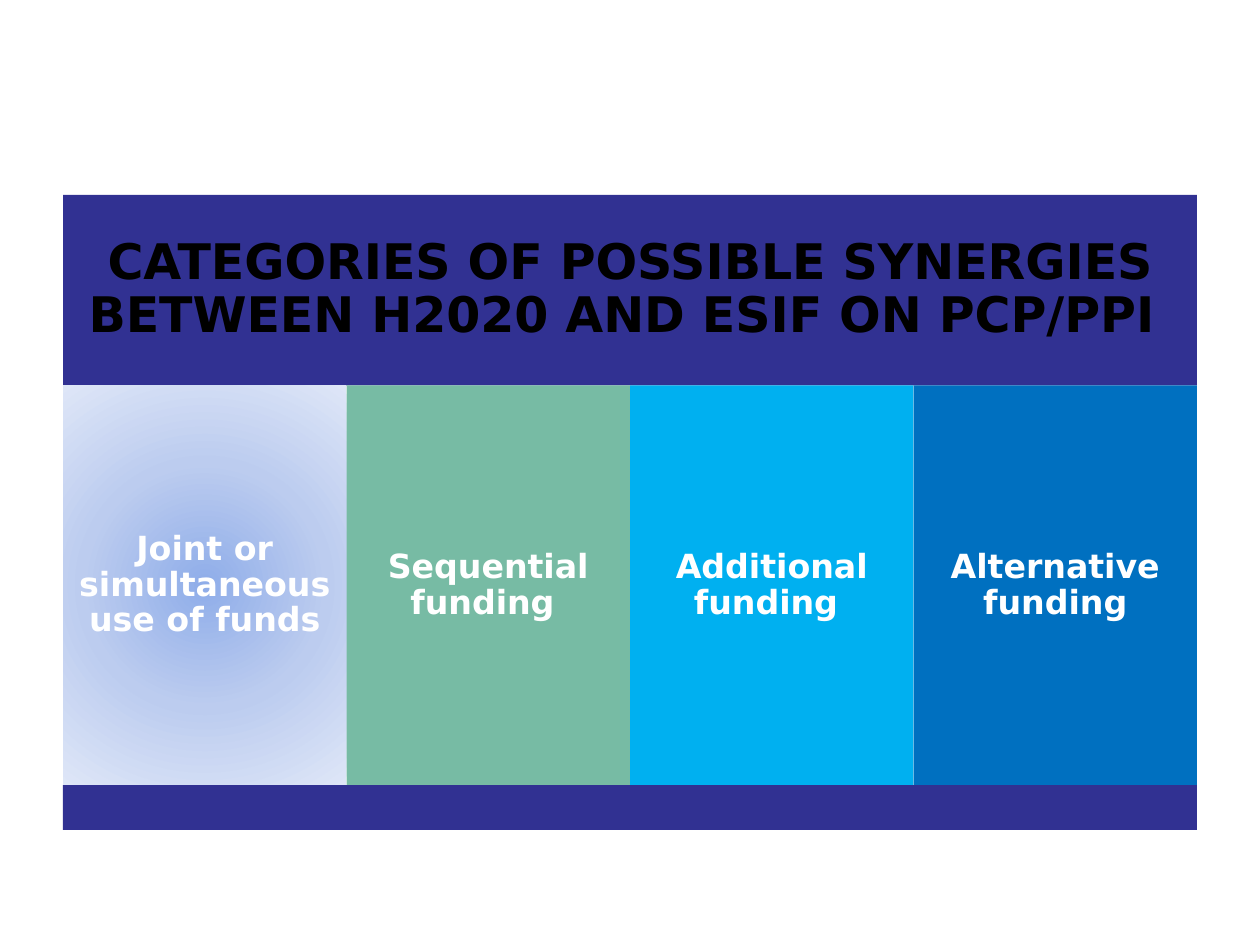
from lxml import etree
from pptx import Presentation
from pptx.dml.color import RGBColor
from pptx.enum.shapes import MSO_SHAPE
from pptx.enum.text import MSO_ANCHOR, MSO_AUTO_SIZE, PP_ALIGN
from pptx.oxml.ns import qn
from pptx.util import Cm, Pt

RECT = MSO_SHAPE.RECTANGLE
MIDDLE = MSO_ANCHOR.MIDDLE
CENTER = PP_ALIGN.CENTER
NO_AUTOFIT = MSO_AUTO_SIZE.NONE
TITLE_ONLY = 5

FONT = "DejaVu Sans"
NAVY = "313192"
CATEGORIES = [
    ("Joint or simultaneous use of funds", ["8FADE9", "BCCCEF", "DEE6F7"]),
    ("Sequential funding ", ["77BBA4"]),
    ("Additional funding ", ["00B0F0"]),
    ("Alternative funding", ["0070C0"]),
]


def rgb(value):
    return RGBColor.from_string(value)


def fill_solid(sp, color):
    sp.fill.solid()
    sp.fill.fore_color.rgb = rgb(color)


def fill_radial(sp, colors):
    """Spread the colours evenly from the centre to the corners."""
    fill_solid(sp, colors[0])
    solid = sp._element.spPr.find(qn("a:solidFill"))
    grad = etree.Element(qn("a:gradFill"), rotWithShape="1")
    stops = etree.SubElement(grad, qn("a:gsLst"))
    for i, color in enumerate(colors):
        pos = 100000 * i // (len(colors) - 1)
        stop = etree.SubElement(stops, qn("a:gs"), pos=str(pos))
        etree.SubElement(stop, qn("a:srgbClr"), val=color)
    circle = etree.SubElement(grad, qn("a:path"), path="circle")
    etree.SubElement(circle, qn("a:fillToRect"),
                     l="50000", t="50000", r="50000", b="50000")
    solid.getparent().replace(solid, grad)


def set_text(sp, text, size, color, inset):
    tf = sp.text_frame
    tf.text = text
    tf.word_wrap = True
    tf.auto_size = NO_AUTOFIT
    tf.vertical_anchor = MIDDLE
    tf.margin_left = tf.margin_right = inset
    tf.margin_top = tf.margin_bottom = inset
    p = tf.paragraphs[0]
    p.alignment = CENTER
    p.line_spacing = 0.9
    font = p.runs[0].font
    font.name = FONT
    font.size = Pt(size)
    font.bold = True
    font.color.rgb = rgb(color)


def add_box(slide, left, top, width, height):
    sp = slide.shapes.add_shape(RECT, left, top, width, height)
    sp.shadow.inherit = False
    sp.line.fill.background()
    return sp


def place_title(slide, left, top, width, height):
    title = slide.shapes.title
    title.left, title.top, title.width, title.height = left, top, width, height
    fill_solid(title, NAVY)
    set_text(title, "CATEGORIES OF POSSIBLE SYNERGIES BETWEEN H2020 "
             "AND ESIF ON PCP/PPI ", 28, "000000", Cm(0.3))


def add_categories(slide, left, top, width, height):
    column = width // len(CATEGORIES)
    for i, (text, colors) in enumerate(CATEGORIES):
        sp = add_box(slide, left + i * column, top, column, height)
        if len(colors) > 1:
            fill_radial(sp, colors)
        else:
            fill_solid(sp, colors[0])
        set_text(sp, text, 19, "FFFFFF", Cm(0.2))


def add_footer_band(slide, left, top, width, height):
    fill_solid(add_box(slide, left, top, width, height), NAVY)


def main():
    prs = Presentation()
    prs.slide_width, prs.slide_height = Cm(25.4), Cm(19.05)
    slide = prs.slides.add_slide(prs.slide_layouts[TITLE_ONLY])

    # Three regions stacked without gaps
    left, top, width = Cm(1.27), Cm(3.93), Cm(22.86)
    regions = [(place_title, Cm(3.84)), (add_categories, Cm(8.06)),
               (add_footer_band, Cm(0.9))]
    for build, height in regions:
        build(slide, left, top, width, height)
        top += height

    prs.save("out.pptx")


if __name__ == "__main__":
    main()
